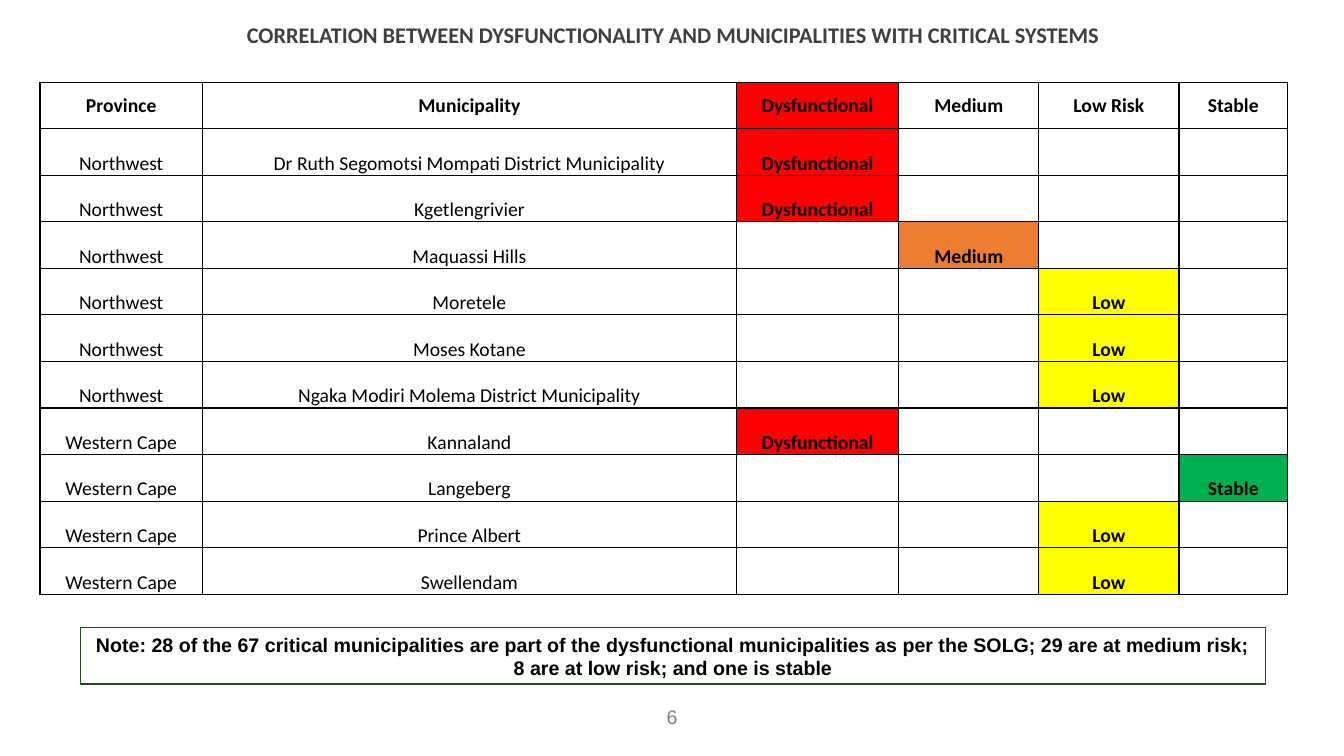
from pptx import Presentation, util as u
from pptx.dml.color import RGBColor
from pptx.enum import shapes, text
from pptx.oxml import parse_xml
from pptx.oxml.ns import nsdecls

HEADERS = ["Province", "Municipality", "Dysfunctional", "Medium", "Low Risk", "Stable"]
COL_WIDTHS = [4.09, 13.46, 4.09, 3.53, 3.53, 2.74]
ROW_HEIGHT = 1.173
# Each rating has its column and its fill
RATINGS = {
    "Dysfunctional": (2, "FF0000"),
    "Medium": (3, "ED7D31"),
    "Low": (4, "FFFF00"),
    "Stable": (5, "00B050"),
}
MUNICIPALITIES = [
    ("Northwest", "Dr Ruth Segomotsi Mompati District Municipality", "Dysfunctional"),
    ("Northwest", "Kgetlengrivier", "Dysfunctional"),
    ("Northwest", "Maquassi Hills", "Medium"),
    ("Northwest", "Moretele", "Low"),
    ("Northwest", "Moses Kotane", "Low"),
    ("Northwest", "Ngaka Modiri Molema District Municipality", "Low"),
    ("Western Cape", "Kannaland", "Dysfunctional"),
    ("Western Cape", "Langeberg", "Stable"),
    ("Western Cape", "Prince Albert", "Low"),
    ("Western Cape", "Swellendam", "Low"),
]


def rgb(value):
    return RGBColor.from_string(value)


def write(tf, content, font="Calibri", size=14, color="000000", bold=False, spacing=None):
    """Put one centred, formatted paragraph in a text frame."""
    p = tf.paragraphs[0]
    p.alignment = text.PP_ALIGN.CENTER
    if spacing:
        p.line_spacing = spacing
    r = p.add_run()
    r.text = content
    r.font.name = font
    r.font.size = u.Pt(size)
    r.font.bold = bold
    r.font.color.rgb = rgb(color)


class SlideBuilder:
    """Holds the current slide and draws its elements, in centimetres."""

    def __init__(self, prs):
        self.s = prs.slides.add_slide(prs.slide_layouts[5])

    def title(self, content, x, y, w, h):
        sp = self.s.shapes.title
        sp.left, sp.top, sp.width, sp.height = map(u.Cm, (x, y, w, h))
        tf = sp.text_frame
        tf.word_wrap = True
        tf.auto_size = text.MSO_AUTO_SIZE.NONE
        tf.vertical_anchor = text.MSO_ANCHOR.TOP
        write(tf, content, size=16, color="404040", bold=True, spacing=0.9)

    def label(self, content, x, y, w, h, **style):
        tf = self.s.shapes.add_textbox(*map(u.Cm, (x, y, w, h))).text_frame
        tf.word_wrap = True
        write(tf, content, **style)

    def note(self, content, x, y, w, h):
        sp = self.s.shapes.add_shape(shapes.MSO_SHAPE.RECTANGLE, *map(u.Cm, (x, y, w, h)))
        sp.shadow.inherit = False
        sp.fill.solid()
        sp.fill.fore_color.rgb = rgb("FFFFFF")
        sp.line.color.rgb = rgb("1D4B10")
        sp.line.width = u.Pt(1)
        tf = sp.text_frame
        tf.word_wrap = True
        tf.vertical_anchor = text.MSO_ANCHOR.MIDDLE
        write(tf, content, font="Arial", bold=True)

    def cell(self, cell, content, fill, bold, anchor):
        cell.margin_left = cell.margin_right = cell.margin_top = u.Cm(0.03)
        cell.margin_bottom = 0
        cell.vertical_anchor = anchor
        tc_pr = cell._tc.get_or_add_tcPr()
        for side in "LRTB":
            tc_pr.append(parse_xml(
                f'<a:ln{side} {nsdecls("a")} w="{u.Pt(1)}"><a:solidFill>'
                f'<a:srgbClr val="000000"/></a:solidFill></a:ln{side}>'))
        cell.fill.solid()
        cell.fill.fore_color.rgb = rgb(fill)
        if content:
            write(cell.text_frame, content, bold=bold)

    def ratings_table(self, x, y):
        n_rows = len(MUNICIPALITIES) + 1
        table = self.s.shapes.add_table(
            n_rows, len(HEADERS), u.Cm(x), u.Cm(y),
            u.Cm(sum(COL_WIDTHS)), u.Cm(ROW_HEIGHT * n_rows)).table
        table.horz_banding = False
        for col, width in zip(table.columns, COL_WIDTHS):
            col.width = u.Cm(width)
        for row in table.rows:
            row.height = u.Cm(ROW_HEIGHT)
        for c, header in enumerate(HEADERS):
            fill = RATINGS[header][1] if header == "Dysfunctional" else "FFFFFF"
            self.cell(table.cell(0, c), header, fill, True, text.MSO_ANCHOR.MIDDLE)
        for r, (province, municipality, rating) in enumerate(MUNICIPALITIES, 1):
            rated_col, color = RATINGS[rating]
            values = {0: province, 1: municipality, rated_col: rating}
            for c in range(len(HEADERS)):
                rated = c == rated_col
                self.cell(table.cell(r, c), values.get(c), color if rated else "FFFFFF",
                          rated, text.MSO_ANCHOR.BOTTOM)


def main():
    prs = Presentation()
    prs.slide_width, prs.slide_height = u.Cm(33.87), u.Cm(19.05)
    slide = SlideBuilder(prs)
    slide.label("6", 13.13, 17.65, 7.62, 1.02, font="Arial", color="808080")
    slide.title("CORRELATION BETWEEN DYSFUNCTIONALITY AND MUNICIPALITIES WITH CRITICAL SYSTEMS",
                2.03, 0.48, 29.87, 1.14)
    slide.ratings_table(1.01, 2.07)
    slide.note("Note: 28 of the 67 critical municipalities are part of the dysfunctional "
               "municipalities as per the SOLG; 29 are at medium risk; 8 are at low risk; "
               "and one is stable", 2.03, 15.82, 29.87, 1.42)
    prs.save("out.pptx")


if __name__ == "__main__":
    main()
